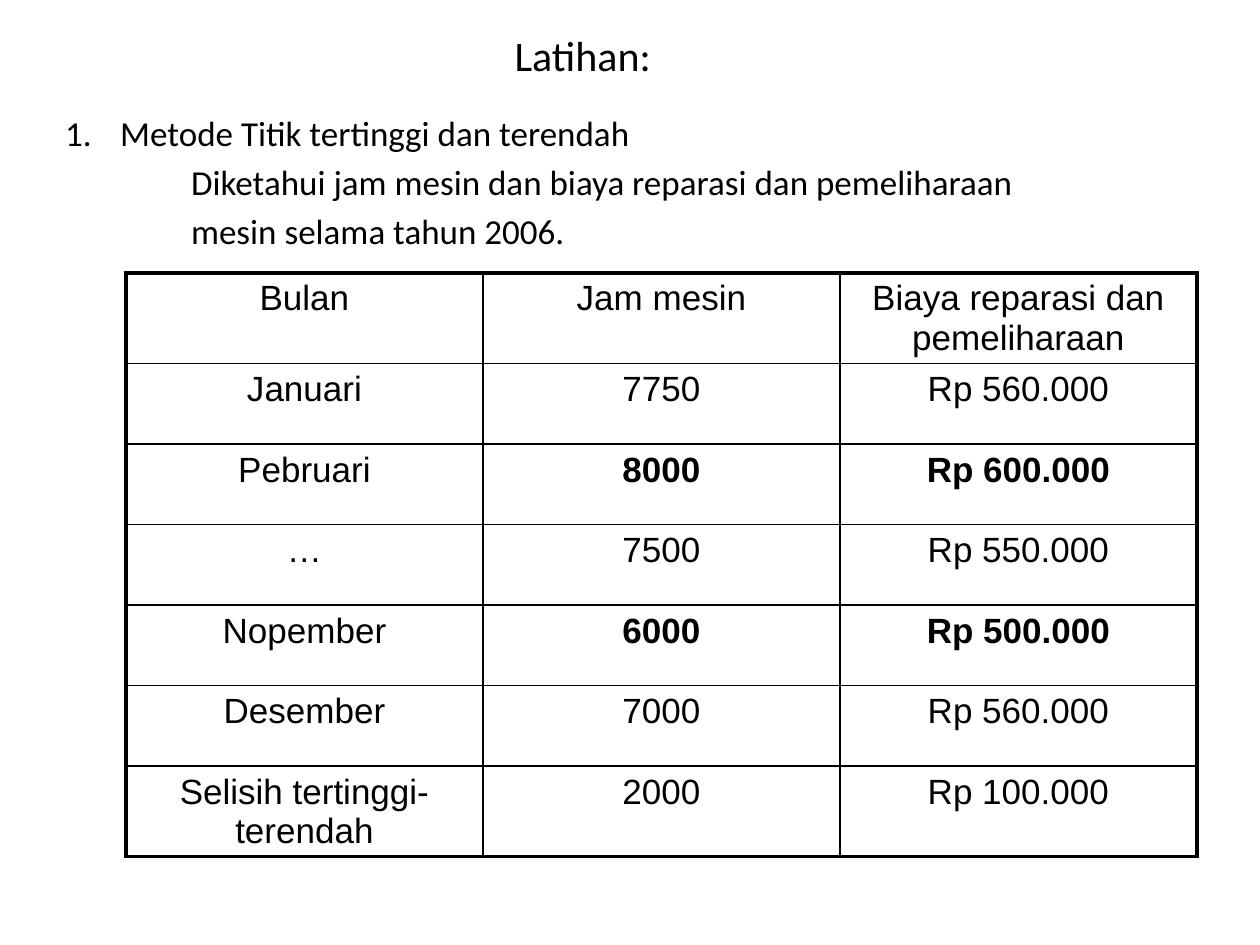
from lxml import etree
from pptx import Presentation
from pptx.dml import color
from pptx.enum import text
from pptx.oxml import ns
from pptx.util import Pt

COLORS = {"text": "000000", "border": "000000", "background": "FFFFFF"}
HEADER = ("Bulan", "Jam mesin", "Biaya reparasi dan pemeliharaan")
MONTHS = [
    ("Januari", "7750", "Rp 560.000"),
    ("Pebruari", "8000", "Rp 600.000"),
    ("…", "7500", "Rp 550.000"),
    ("Nopember", "6000", "Rp 500.000"),
    ("Desember", "7000", "Rp 560.000"),
    ("Selisih tertinggi-terendah", "2000", "Rp 100.000"),
]
EXTREMES = ("Pebruari", "Nopember")
BODY_LINES = [
    "Metode Titik tertinggi dan terendah",
    "Diketahui jam mesin dan biaya reparasi dan pemeliharaan",
    "mesin selama tahun 2006.",
]
THIN, THICK = 1, 2.25


def place(shape, left, top, width, height):
    shape.left, shape.top = Pt(left), Pt(top)
    shape.width, shape.height = Pt(width), Pt(height)


def format_runs(paragraph, font_name, size, bold=False):
    for run in paragraph.runs:
        run.font.name = font_name
        run.font.size = Pt(size)
        run.font.bold = bold
        run.font.color.rgb = color.RGBColor.from_string(COLORS["text"])


def set_indent(paragraph, margin, indent, numbered):
    """Set the left margin and first-line indent, with a number or no bullet."""
    properties = paragraph._p.get_or_add_pPr()
    properties.set("marL", str(Pt(margin)))
    properties.set("indent", str(Pt(indent)))
    if numbered:
        etree.SubElement(properties, ns.qn("a:buSzPts"), val="1800")
        etree.SubElement(properties, ns.qn("a:buFont"), typeface="Calibri")
        etree.SubElement(properties, ns.qn("a:buAutoNum"), type="arabicPeriod")
    else:
        etree.SubElement(properties, ns.qn("a:buNone"))


def fill_title(title):
    place(title, 36, 9, 594, 45)
    frame = title.text_frame
    frame.text = "Latihan:"
    frame.auto_size = text.MSO_AUTO_SIZE.NONE
    frame.vertical_anchor = text.MSO_ANCHOR.MIDDLE
    frame.paragraphs[0].alignment = text.PP_ALIGN.CENTER
    format_runs(frame.paragraphs[0], "Calibri", 24)


def fill_body(body):
    place(body, 30, 60, 666, 96)
    frame = body.text_frame
    frame.text = "\n".join(BODY_LINES)
    frame.auto_size = text.MSO_AUTO_SIZE.NONE
    for index, paragraph in enumerate(frame.paragraphs):
        paragraph.space_before = Pt(4)
        format_runs(paragraph, "Calibri", 20)
        if index == 0:
            set_indent(paragraph, 31.5, -31.5, numbered=True)
        else:
            set_indent(paragraph, 72, 0, numbered=False)


def set_borders(cell, widths):
    """Draw the left, right, top and bottom borders, in that order."""
    properties = cell._tc.get_or_add_tcPr()
    for index, (side, width) in enumerate(zip("LRTB", widths)):
        line = etree.Element(ns.qn(f"a:ln{side}"), w=str(Pt(width)))
        fill = etree.SubElement(line, ns.qn("a:solidFill"))
        etree.SubElement(fill, ns.qn("a:srgbClr"), val=COLORS["border"])
        properties.insert(index, line)


def fill_cell(cell, content, bold):
    cell.text = content
    cell.fill.background()
    paragraph = cell.text_frame.paragraphs[0]
    paragraph.alignment = text.PP_ALIGN.CENTER
    format_runs(paragraph, "Arial", 20, bold)


def add_cost_table(slide):
    rows = [HEADER, *MONTHS]
    last_row, last_column = len(rows) - 1, len(HEADER) - 1
    table = slide.shapes.add_table(
        len(rows), len(HEADER), Pt(72), Pt(156), Pt(612), Pt(46 * len(rows))
    ).table
    table.first_row = table.horz_banding = False
    for row, values in enumerate(rows):
        for column, value in enumerate(values):
            cell = table.cell(row, column)
            fill_cell(cell, value, column > 0 and values[0] in EXTREMES)
            on_edge = (column == 0, column == last_column, row == 0, row == last_row)
            set_borders(cell, [THICK if edge else THIN for edge in on_edge])


def main():
    presentation = Presentation()
    presentation.slide_width, presentation.slide_height = Pt(720), Pt(540)
    slide = presentation.slides.add_slide(presentation.slide_layouts[1])
    background = slide.background.fill
    background.solid()
    background.fore_color.rgb = color.RGBColor.from_string(COLORS["background"])
    fill_title(slide.shapes.title)
    fill_body(slide.placeholders[1])
    add_cost_table(slide)
    presentation.save("out.pptx")


if __name__ == "__main__":
    main()
